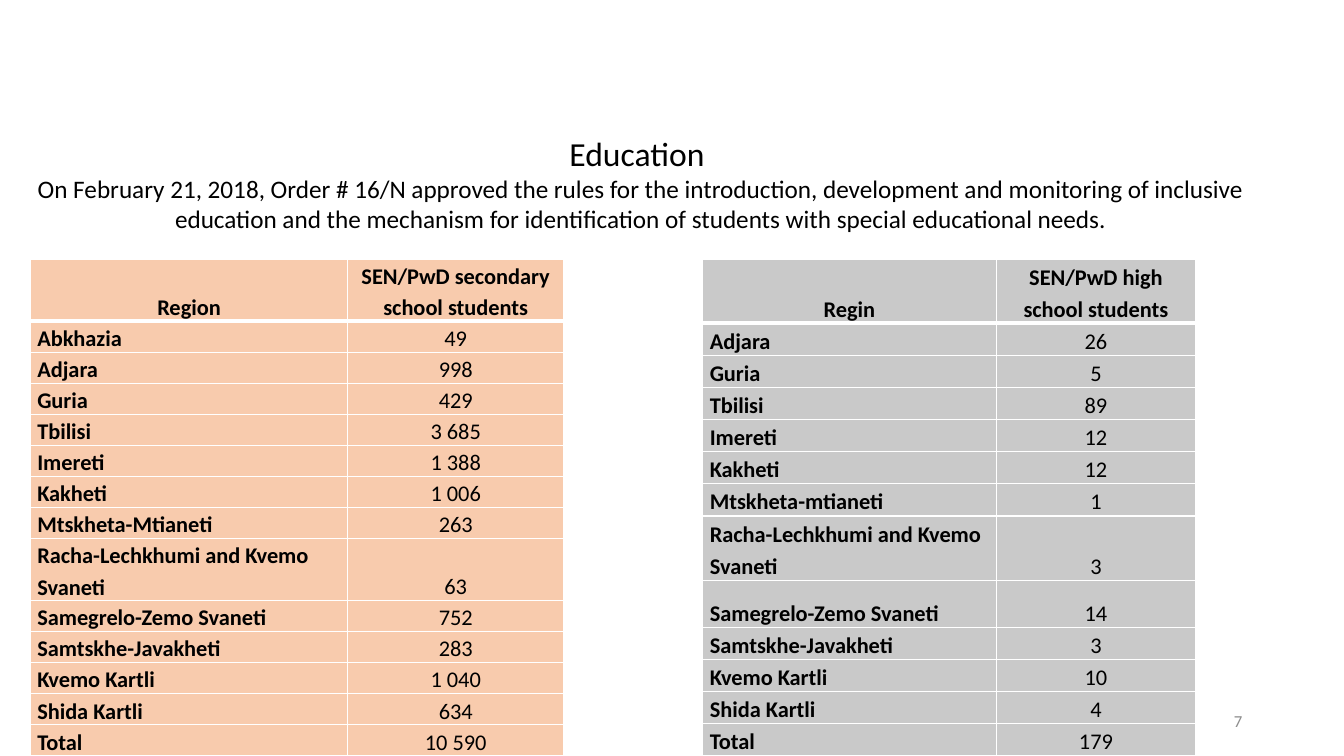
import pptx
import pptx.dml.color
import pptx.enum.text
import pptx.util
from lxml import etree
from pptx.util import Inches

ALIGN = pptx.enum.text.PP_ALIGN
ANCHOR = pptx.enum.text.MSO_ANCHOR
DRAWING = "http://schemas.openxmlformats.org/drawingml/2006/main"

SECONDARY_STUDENTS = [
    ("Region", "SEN/PwD secondary school students"),
    ("Abkhazia", "49"),
    ("Adjara", "998"),
    ("Guria", "429"),
    ("Tbilisi", "3 685"),
    ("Imereti", "1 388"),
    ("Kakheti", "1 006"),
    ("Mtskheta-Mtianeti", "263"),
    ("Racha-Lechkhumi and Kvemo Svaneti", "63"),
    ("Samegrelo-Zemo Svaneti", "752"),
    ("Samtskhe-Javakheti", "283"),
    ("Kvemo Kartli", "1 040"),
    ("Shida Kartli", "634"),
    ("Total", "10 590"),
]
HIGH_SCHOOL_STUDENTS = [
    ("Regin", "SEN/PwD high school students"),
    ("Adjara", "26"),
    ("Guria", "5"),
    ("Tbilisi", "89"),
    ("Imereti", "12"),
    ("Kakheti", "12"),
    ("Mtskheta-mtianeti", "1"),
    ("Racha-Lechkhumi and Kvemo Svaneti", "3"),
    ("Samegrelo-Zemo Svaneti", "14"),
    ("Samtskhe-Javakheti", "3"),
    ("Kvemo Kartli", "10"),
    ("Shida Kartli", "4"),
    ("Total", "179"),
]


def color(value):
    return pptx.dml.color.RGBColor.from_string(value)


class RegionSlide:
    font_name = "Calibri"
    text_color = "000000"
    border_color = "FFFFFF"

    def __init__(self, deck):
        self.slide = deck.slides.add_slide(deck.slide_layouts[6])

    def style(self, paragraph, size, align, bold=False, hue=text_color):
        paragraph.alignment = align
        for span in paragraph.runs:
            span.font.name = self.font_name
            span.font.size = pptx.util.Pt(size)
            span.font.bold = bold
            span.font.color.rgb = color(hue)

    def text(self, left, top, width, height, lines, align, hue=text_color):
        box = self.slide.shapes.add_textbox(
            Inches(left), Inches(top), Inches(width), Inches(height))
        frame = box.text_frame
        frame.word_wrap = True
        frame.text = "\n".join(line for line, size in lines)
        for paragraph, (line, size) in zip(frame.paragraphs, lines):
            self.style(paragraph, size, align, hue=hue)
        return frame

    def border(self, cell, side, points):
        properties = cell._tc.get_or_add_tcPr()
        line = etree.SubElement(properties, f"{{{DRAWING}}}ln{side}",
                                w=str(pptx.util.Pt(points)))
        fill = etree.SubElement(line, f"{{{DRAWING}}}solidFill")
        etree.SubElement(fill, f"{{{DRAWING}}}srgbClr", val=self.border_color)

    def cell(self, cell, content, row, column, fill):
        for side in "LRTB":
            heavy = (row, side) in ((0, "B"), (1, "T"))
            self.border(cell, side, 3 if heavy else 1)
        cell.fill.solid()
        cell.fill.fore_color.rgb = color(fill)
        cell.vertical_anchor = ANCHOR.BOTTOM
        cell.margin_left = cell.margin_right = Inches(0.07)
        cell.margin_top = cell.margin_bottom = 0
        cell.text_frame.text = content
        paragraph = cell.text_frame.paragraphs[0]
        paragraph.line_spacing = 1.15
        centered = row == 0 or column == 1
        self.style(paragraph, 16, ALIGN.CENTER if centered else ALIGN.LEFT,
                   bold=row == 0 or column == 0)

    def table(self, left, widths, heights, records, fill):
        table = self.slide.shapes.add_table(
            len(records), len(widths), Inches(left), Inches(2.57),
            Inches(sum(widths)), Inches(sum(heights))).table
        table.horz_banding = False
        for column, width in zip(table.columns, widths):
            column.width = Inches(width)
        for row, height in zip(table.rows, heights):
            row.height = Inches(height)
        for row, record in enumerate(records):
            for column, content in enumerate(record):
                self.cell(table.cell(row, column), content, row, column, fill)


def row_heights(records, total, special):
    doubled = [row == 0 or name.startswith("Racha")
               for row, (name, count) in enumerate(records)]
    units = [0 if row in special else 1 + double
             for row, double in enumerate(doubled)]
    unit = (total - sum(special.values())) / sum(units)
    return [special.get(row, count * unit) for row, count in enumerate(units)]


def main():
    deck = pptx.Presentation()
    deck.slide_width = Inches(13.33)
    deck.slide_height = Inches(7.5)
    page = RegionSlide(deck)

    number = page.text(9.42, 6.95, 3, 0.4, [("7", 12)], ALIGN.RIGHT, "8C8C8C")
    number.vertical_anchor = ANCHOR.MIDDLE

    heading = page.text(0, 0.97, 12.71, 1.41, [
        ("Education ", 24),
        ("On February 21, 2018, Order # 16/N approved the rules for the "
         "introduction, development and monitoring of inclusive education "
         "and the mechanism for identification of students with special "
         "educational needs.", 18),
    ], ALIGN.CENTER)
    heading.margin_top = Inches(0.35)
    heading.auto_size = pptx.enum.text.MSO_AUTO_SIZE.SHAPE_TO_FIT_TEXT

    page.table(0.3, [3.15, 2.14], row_heights(SECONDARY_STUDENTS, 4.93, {}),
               SECONDARY_STUDENTS, "F8CBAD")
    page.table(6.97, [2.91, 1.98],
               row_heights(HIGH_SCHOOL_STUDENTS, 4.93, {8: 0.47}),
               HIGH_SCHOOL_STUDENTS, "C9C9C9")
    deck.save("out.pptx")


if __name__ == "__main__":
    main()
